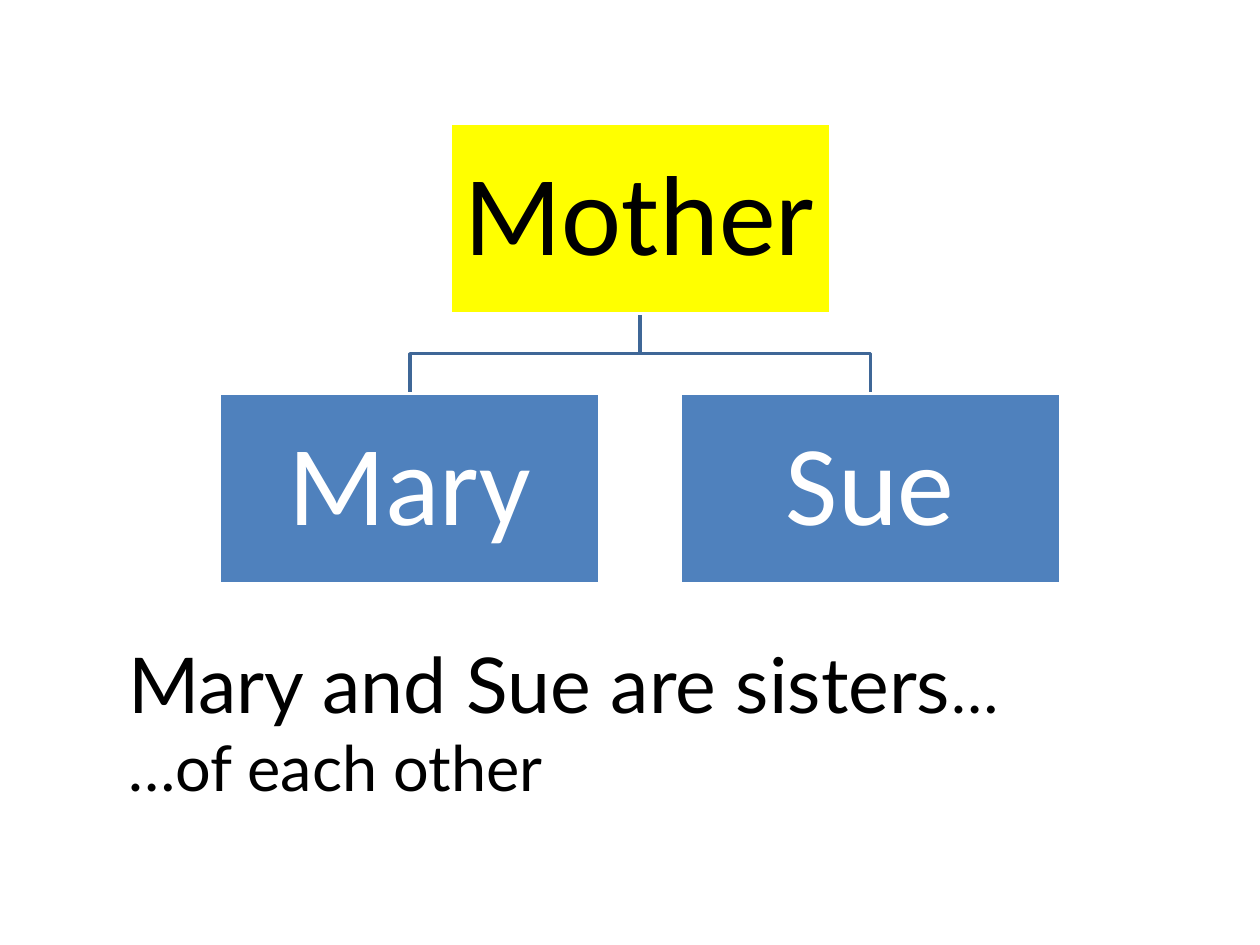
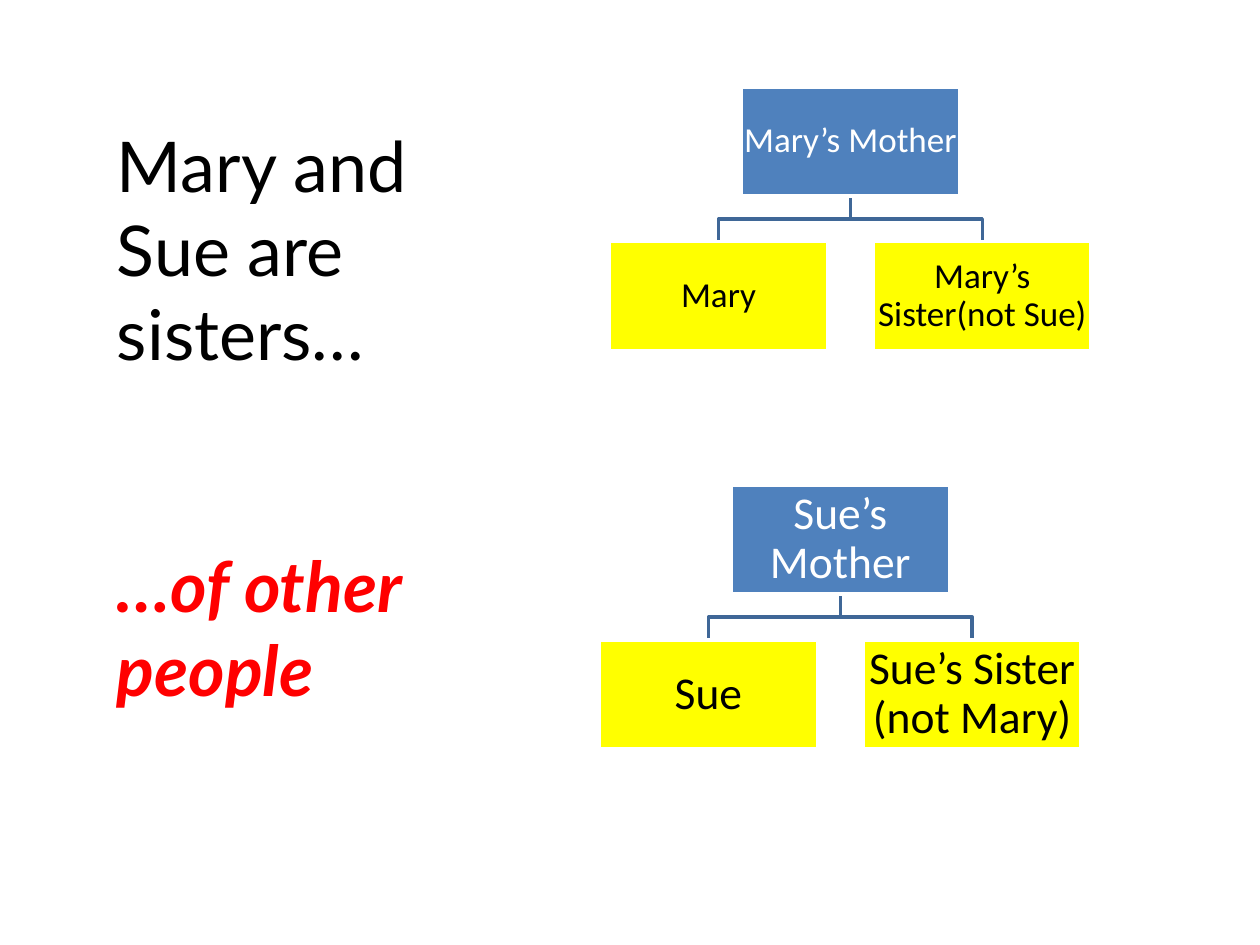
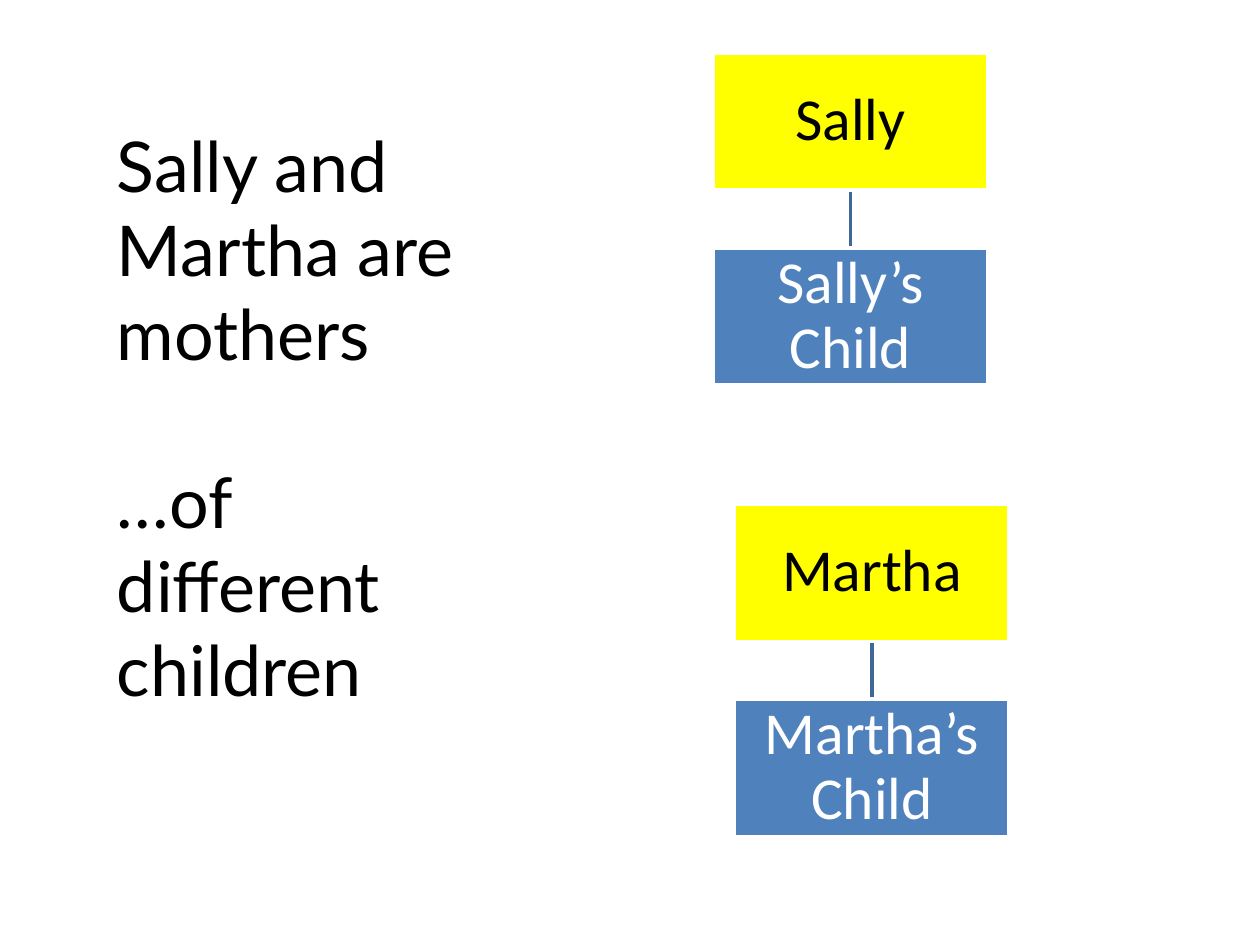
from dataclasses import dataclass
from typing import Any

import pptx
import pptx.dml.color
import pptx.enum.shapes
import pptx.enum.text
import pptx.oxml
import pptx.util
from pptx.util import Inches, Pt

COLORS = {
    "yellow": "FFFF00",
    "blue": "4F81BD",
    "line": "3F6797",
    "white": "FFFFFF",
    "black": "000000",
    "red": "FF0000",
}
TEXT_ON = {"yellow": "black", "blue": "white"}
LINE_WIDTH = Pt(2)
HEIGHT_RATIO = 0.5
SIBLING_RATIO = 0.21
LEVEL_RATIO = 0.42


@dataclass(frozen=True)
class Span:
    text: str
    size: int
    color: str = "black"
    emphasis: bool = False


@dataclass(frozen=True)
class Para:
    spans: list[Span]
    space_before: int = 0


@dataclass(frozen=True)
class Caption:
    left: float
    top: float
    width: float
    height: float
    paras: list[Para]


@dataclass(frozen=True)
class FamilyTree:
    center: float
    top: float
    box_width: float
    size: int
    inset: float
    parent: str
    children: list[str]
    parent_color: str
    child_color: str


@dataclass(frozen=True)
class Page:
    caption: Caption
    trees: list[FamilyTree]


def side_caption(*paras: Para) -> Caption:
    return Caption(0.83, 0.92, 2.92, 4.81, list(paras))


PAGES = [
    Page(
        Caption(0.92, 5, 8.33, 1.45, [
            Para([Span("Mary and Sue are sisters", 44), Span("…", 36)]),
            Para([Span("…of each other", 36)]),
        ]),
        [FamilyTree(5.08, 0.98, 3.02, 65, 0.05, "Mother", ["Mary", "Sue"], "yellow", "blue")],
    ),
    Page(
        side_caption(
            Para([Span("Mary and Sue are sisters…", 40)]),
            Para([Span("…of other people", 40, "red", True)], 96),
        ),
        [
            FamilyTree(6.75, 0.69, 1.73, 20, 0.01, "Mary’s Mother",
                       ["Mary", "Mary’s Sister(not Sue)"], "blue", "yellow"),
            FamilyTree(6.67, 3.85, 1.73, 26, 0.02, "Sue’s Mother",
                       ["Sue", "Sue’s Sister (not Mary)"], "blue", "yellow"),
        ],
    ),
    Page(
        side_caption(
            Para([Span("Sally and Martha are mothers", 40)]),
            Para([Span("…of different children", 40)], 48),
        ),
        [
            FamilyTree(6.75, 0.42, 2.18, 34, 0.02, "Sally", ["Sally’s Child"], "yellow", "blue"),
            FamilyTree(6.92, 4, 2.18, 34, 0.02, "Martha", ["Martha’s Child"], "yellow", "blue"),
        ],
    ),
]


def apply(target: Any, formats: dict[str, Any]) -> None:
    for name, value in formats.items():
        setattr(target, name, value)


def rgb(color: str) -> pptx.dml.color.RGBColor:
    return pptx.dml.color.RGBColor.from_string(COLORS[color])


def set_line(shape: Any, color: str) -> None:
    shape.line.color.rgb = rgb(color)
    shape.line.width = LINE_WIDTH


def add_span(para: Any, span: Span, font_name: str) -> None:
    run = para.add_run()
    run.text = span.text
    apply(run.font, {"name": font_name, "size": Pt(span.size),
                     "bold": span.emphasis, "italic": span.emphasis})
    run.font.color.rgb = rgb(span.color)


def draw_caption(page: Any, caption: Caption) -> None:
    box = page.shapes.add_textbox(Inches(caption.left), Inches(caption.top),
                                  Inches(caption.width), Inches(caption.height))
    frame = box.text_frame
    apply(frame, {"word_wrap": True,
                  "auto_size": pptx.enum.text.MSO_AUTO_SIZE.SHAPE_TO_FIT_TEXT})
    for index, item in enumerate(caption.paras):
        para = frame.add_paragraph() if index else frame.paragraphs[0]
        para.space_before = Pt(item.space_before)
        for span in item.spans:
            add_span(para, span, "Lato")


def draw_person(page: Any, tree: FamilyTree, name: str, center: float, top: float,
                color: str) -> None:
    width = tree.box_width
    box = page.shapes.add_shape(pptx.enum.shapes.MSO_SHAPE.RECTANGLE,
                                Inches(center - width / 2), Inches(top),
                                Inches(width), Inches(width * HEIGHT_RATIO))
    box.shadow.inherit = False
    box.fill.solid()
    box.fill.fore_color.rgb = rgb(color)
    set_line(box, "white")
    frame = box.text_frame
    inset = Inches(tree.inset)
    apply(frame, {"word_wrap": True, "vertical_anchor": pptx.enum.text.MSO_ANCHOR.MIDDLE,
                  "margin_left": inset, "margin_right": inset,
                  "margin_top": inset, "margin_bottom": inset})
    para = frame.paragraphs[0]
    apply(para, {"alignment": pptx.enum.text.PP_ALIGN.CENTER, "line_spacing": 0.9})
    add_span(para, Span(name, tree.size, TEXT_ON[color]), "Calibri")


def draw_branch(page: Any, start: float, end: float, top: float, bottom: float) -> None:
    if start == end:
        branch = page.shapes.add_connector(pptx.enum.shapes.MSO_CONNECTOR.STRAIGHT,
                                           Inches(start), Inches(top),
                                           Inches(end), Inches(bottom))
        branch.element.spPr.append(pptx.oxml.parse_xml(
            '<a:effectLst xmlns:a="http://schemas.openxmlformats.org/drawingml/2006/main"/>'))
    else:
        middle = (top + bottom) / 2
        corners = [(start, middle), (end, middle), (end, bottom)]
        builder = page.shapes.build_freeform(Inches(start), Inches(top))
        builder.add_line_segments([(Inches(x), Inches(y)) for x, y in corners], close=False)
        branch = builder.convert_to_shape()
        branch.shadow.inherit = False
        branch.fill.background()
    set_line(branch, "line")


def draw_tree(page: Any, tree: FamilyTree) -> None:
    height = tree.box_width * HEIGHT_RATIO
    parent_bottom = tree.top + height
    child_top = parent_bottom + height * LEVEL_RATIO
    step = tree.box_width * (1 + SIBLING_RATIO)
    middle_index = (len(tree.children) - 1) / 2
    centers = [tree.center + (index - middle_index) * step
               for index in range(len(tree.children))]
    for center in centers:
        draw_branch(page, tree.center, center, parent_bottom, child_top)
    draw_person(page, tree, tree.parent, tree.center, tree.top, tree.parent_color)
    for name, center in zip(tree.children, centers):
        draw_person(page, tree, name, center, child_top, tree.child_color)


def main() -> None:
    deck = pptx.Presentation()
    apply(deck, {"slide_width": Inches(10), "slide_height": Inches(7.5)})
    for content in PAGES:
        page = deck.slides.add_slide(deck.slide_layouts[6])
        for tree in content.trees:
            draw_tree(page, tree)
        draw_caption(page, content.caption)
    deck.save("out.pptx")


if __name__ == "__main__":
    main()
